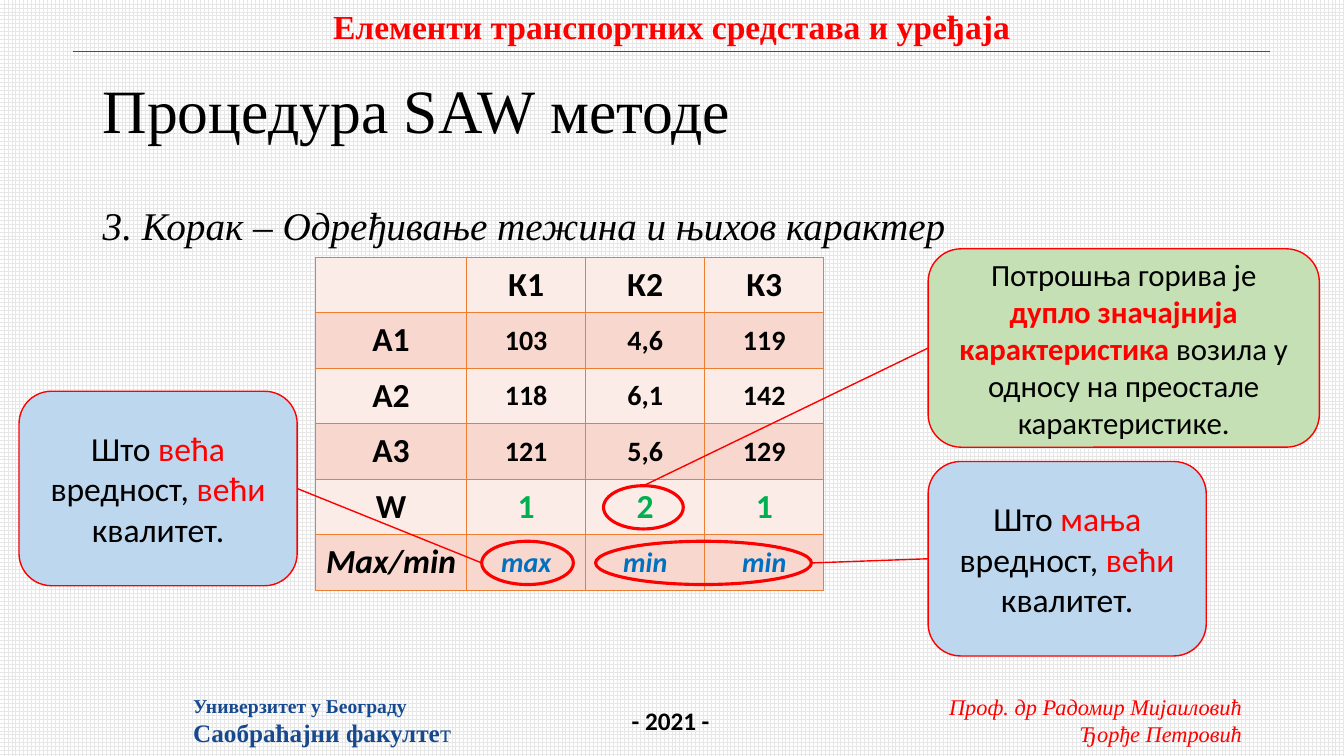
from lxml.etree import SubElement
from pptx import Presentation
from pptx.dml.color import RGBColor
from pptx.enum.dml import MSO_PATTERN
from pptx.enum.shapes import MSO_CONNECTOR, MSO_SHAPE
from pptx.enum.text import MSO_ANCHOR, PP_ALIGN
from pptx.oxml.ns import qn
from pptx.util import Cm, Pt

HUES = {
    "red": "FF0000", "black": "000000", "navy": "16498E", "white": "FFFFFF",
    "grid": "E7E6E6", "pale": "FCECE8", "peach": "F8D7CE", "edge": "ED7D31",
    "sky": "BDD7EE", "leaf": "C5E0B4", "green": "00B050", "blue": "0070C0",
}
SERIF = "Times New Roman"
SANS = "Calibri"
LEFT, MID, RIGHT = PP_ALIGN.LEFT, PP_ALIGN.CENTER, PP_ALIGN.RIGHT
ROWS = [
    ["", "К1", "К2", "К3"],
    ["А1", "103", "4,6", "119"],
    ["А2", "118", "6,1", "142"],
    ["А3", "121", "5,6", "129"],
    ["W", "1", "2", "1"],
    ["Max/min", "max", "min", "min"],
]


def tint(name):
    return RGBColor.from_string(HUES[name])


def style(para, size, face, hue, align=LEFT, bold=False, slant=False):
    para.alignment = align
    font = para.font
    font.size, font.name = Pt(size), face
    font.bold, font.italic = bold, slant
    font.color.rgb = tint(hue)


def add_text(slide, spot, lines, sizes, hue, face=SERIF, wrap=False,
             anchor=MSO_ANCHOR.TOP, space=1.0, **look):
    frame = slide.shapes.add_textbox(*map(Cm, spot)).text_frame
    frame.word_wrap = wrap
    frame.vertical_anchor = anchor
    frame.text = "\n".join(lines)
    for para, size in zip(frame.paragraphs, sizes):
        para.line_spacing = space
        style(para, size, face, hue, **look)
    return frame


def add_form(slide, kind, spot, width, fill=None):
    form = slide.shapes.add_shape(kind, *map(Cm, spot))
    form.shadow.inherit = False
    if fill:
        form.fill.solid()
        form.fill.fore_color.rgb = tint(fill)
    else:
        form.fill.background()
    form.line.color.rgb = tint("red")
    form.line.width = Pt(width)
    return form


def add_ring(slide, *spot):
    return add_form(slide, MSO_SHAPE.OVAL, spot, 2.25)


def add_note(slide, spot, fill, size, parts, bold=False):
    note = add_form(slide, MSO_SHAPE.ROUNDED_RECTANGLE, spot, 1, fill)
    frame = note.text_frame
    frame.word_wrap = True
    frame.vertical_anchor = MSO_ANCHOR.MIDDLE
    para = frame.paragraphs[0]
    style(para, size, SANS, "black", MID)
    for index, part in enumerate(parts):
        run = para.add_run()
        run.text = part
        if index % 2:
            run.font.color.rgb = tint("red")
            run.font.bold = bold
    return note


def add_line(slide, start, end, width):
    line = slide.shapes.add_connector(MSO_CONNECTOR.STRAIGHT, *start, *end)
    line.line.color.rgb = tint("red")
    line.line.width = Pt(width)
    SubElement(line._element.spPr, qn("a:effectLst"))


def side(form, across, down):
    return (form.left + int(form.width * across),
            form.top + int(form.height * down))


def add_edge(cell):
    props = cell._tc.get_or_add_tcPr()
    for index, tag in enumerate(("a:lnL", "a:lnR", "a:lnT", "a:lnB")):
        edge = SubElement(props, qn(tag), w=str(Pt(1)))
        fill = SubElement(edge, qn("a:solidFill"))
        SubElement(fill, qn("a:srgbClr"), val=HUES["edge"])
        props.insert(index, edge)


def cell_look(row, col):
    size = 24 if 0 in (row, col) or row == 4 else 20
    hue = {4: "green", 5: "blue"}.get(row, "black") if col else "black"
    return size, hue


def add_grid(slide):
    frame = slide.shapes.add_table(
        6, 4, Cm(7.95), Cm(6.48), Cm(12.81), Cm(8.4))
    grid = frame.table
    grid.first_row = grid.horz_banding = False
    for index, col in enumerate(grid.columns):
        col.width = Cm(3 if index else 3.81)
    for row, words in enumerate(ROWS):
        grid.rows[row].height = Cm(1.4)
        for col, word in enumerate(words):
            cell = grid.cell(row, col)
            cell.text = word
            cell.vertical_anchor = MSO_ANCHOR.MIDDLE
            cell.fill.solid()
            cell.fill.fore_color.rgb = tint("peach" if row % 2 else "pale")
            add_edge(cell)
            size, hue = cell_look(row, col)
            style(cell.text_frame.paragraphs[0], size, SANS, hue, MID,
                  bold=True, slant=row == 5)


def add_frame(slide):
    back = slide.background.fill
    back.patterned()
    back.pattern = MSO_PATTERN.LARGE_GRID
    back.fore_color.rgb = tint("grid")
    back.back_color.rgb = tint("white")
    add_text(slide, (23.42, 17.35, 8.13, 1.63),
             ["Проф. др Радомир Мијаиловић", "Ђорђе Петровић"],
             [16, 16], "red", align=RIGHT, slant=True)
    add_line(slide, (Cm(1.83), Cm(1.3)), (Cm(32), Cm(1.3)), 0.5)
    add_text(slide, (8.05, 0.03, 17.75, 1.27),
             ["Елементи транспортних средстава и уређаја"],
             [24], "red", align=MID, bold=True)
    add_text(slide, (15.67, 17.65, 2.49, 1.02), ["- 2021 -"],
             [18], "black", SANS, bold=True)
    school = add_text(slide, (4.62, 17.35, 7.09, 1.63),
                      ["Универзитет у Београду", "Саобраћајни факулте"],
                      [14, 18], "navy", bold=True)
    tail = school.paragraphs[1].add_run()
    tail.text = "т"
    tail.font.bold = False


def add_calls(slide):
    twice = add_ring(slide, 15.21, 12.24, 2.01, 1.09)
    most = add_ring(slide, 12.14, 13.64, 2.31, 1.09)
    least = add_ring(slide, 15.01, 13.64, 5.44, 1.09)
    fuel = add_note(
        slide, (23.39, 6.27, 9.86, 5), "leaf", 22,
        ["Потрошња горива је ", "дупло значајнија карактеристика",
         " возила у односу на преостале карактеристике."], True)
    more, less = [
        add_note(slide, (left, top, 7.01, 4.9), "sky", 24,
                 ["Што ", word, " вредност, ", "већи", " квалитет."])
        for left, top, word in ((0.48, 9.86, "већа"), (23.39, 11.63, "мања"))]
    add_line(slide, side(most, 0, 0.5), side(more, 1, 0.5), 1)
    add_line(slide, side(least, 1, 0.5), side(less, 0, 0.5), 1)
    add_line(slide, side(twice, 0.5, 0), side(fuel, 0, 0.5), 1)


def main():
    deck = Presentation()
    deck.slide_width, deck.slide_height = Cm(33.87), Cm(19.05)
    slide = deck.slides.add_slide(deck.slide_layouts[6])
    add_frame(slide)
    add_text(slide, (2.34, 1.02, 29.21, 3.66), ["Процедура SAW методе"],
             [44], "black", wrap=True, anchor=MSO_ANCHOR.MIDDLE, space=0.9)
    add_text(slide, (2.34, 5.08, 29.21, 12.09),
             ["3. Корак – Одређивање тежина и њихов карактер"],
             [28], "black", wrap=True, space=0.9, slant=True)
    add_grid(slide)
    add_calls(slide)
    deck.save("out.pptx")


if __name__ == "__main__":
    main()
